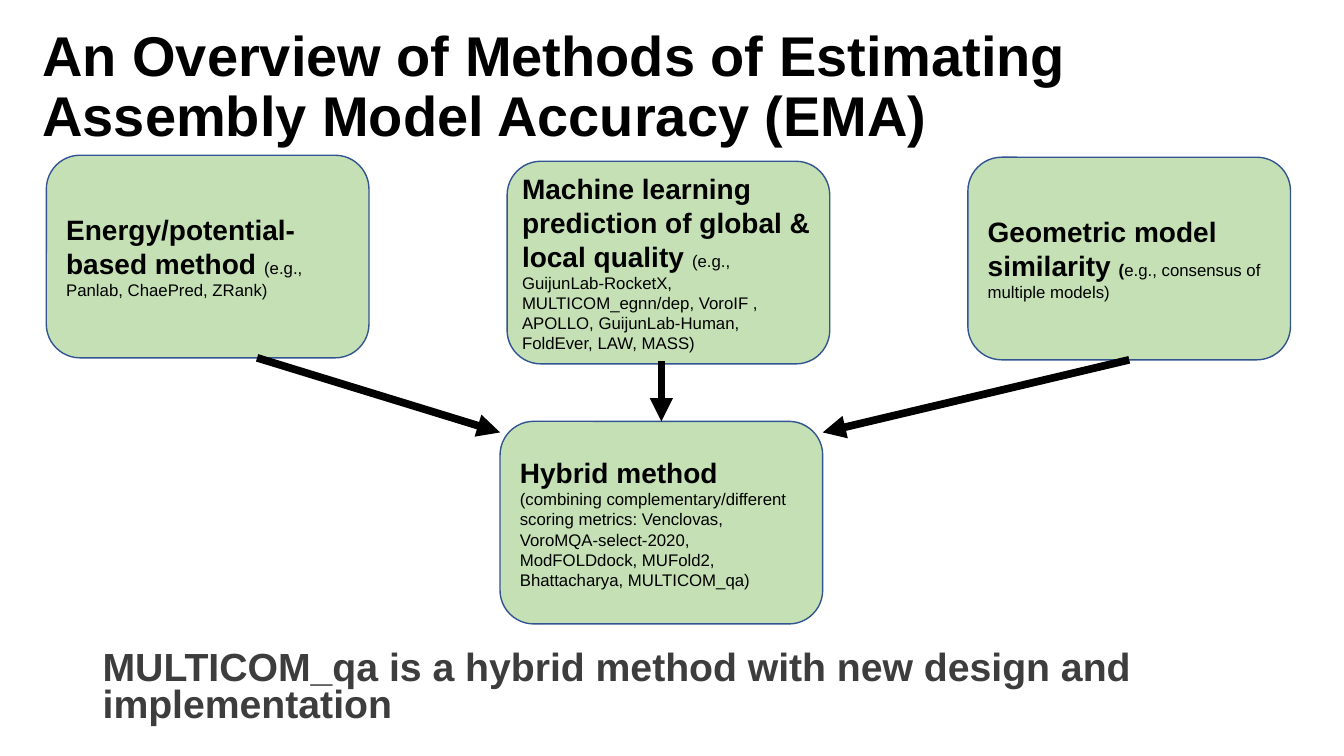
from dataclasses import dataclass

import pptx
import pptx.dml.color
import pptx.enum.shapes
import pptx.enum.text
import pptx.oxml.ns
import pptx.util
from lxml import etree

Inches = pptx.util.Inches
Pt = pptx.util.Pt
ANCHOR = pptx.enum.text.MSO_ANCHOR


@dataclass(frozen=True)
class Theme:
    font: str = "Arial"
    ink: str = "000000"
    muted: str = "3D3D3D"
    box_fill: str = "C5E0B4"
    box_line: str = "325491"
    title: int = 40
    takeaway: int = 28
    heading: int = 20
    detail: int = 12
    box_pt: float = 1
    arrow_pt: float = 5.5


THEME = Theme()

# Grid: three columns of equal boxes
SLIDE_W, SLIDE_H = 13.33, 7.5
BOX_W, BOX_H = 3.2, 2.01
COL_LEFT, COL_PITCH = 0.46, 4.57
HYBRID_LEFT, HYBRID_TOP = 4.96, 4.18
ARROW_DROP = 0.11  # side arrows meet the hybrid box just below its corners

# Column tops, inner margins and text runs (text, size, bold)
METHODS = [
    (1.54, 0.1, [
        ("Energy/potential-based method ", THEME.heading, True),
        ("(e.g., Panlab, ChaePred, ZRank)", THEME.detail, False)]),
    (1.6, 0.05, [
        ("Machine learning prediction of global & local quality ", THEME.heading, True),
        ("(e.g., GuijunLab-RocketX, MULTICOM_egnn/dep, VoroIF , APOLLO, "
         "GuijunLab-Human, FoldEver, LAW, MASS)", THEME.detail, False)]),
    (1.56, 0.1, [
        ("Geometric model similarity ", THEME.heading, True),
        ("(", THEME.detail, True),
        ("e.g., consensus of multiple models)", THEME.detail, False)]),
]
HYBRID_RUNS = [
    ("Hybrid method ", THEME.heading, True),
    ("(combining complementary/different scoring metrics: Venclovas, "
     "VoroMQA-select-2020, ModFOLDdock, MUFold2, Bhattacharya, MULTICOM_qa)",
     THEME.detail, False),
]


def rgb(value):
    return pptx.dml.color.RGBColor.from_string(value)


def write_runs(tf, runs, color=THEME.ink, spacing=1.0):
    tf.word_wrap = True
    tf.auto_size = pptx.enum.text.MSO_AUTO_SIZE.NONE
    p = tf.paragraphs[0]
    p.alignment = pptx.enum.text.PP_ALIGN.LEFT
    p.line_spacing = spacing
    for text, size, bold in runs:
        r = p.add_run()
        r.text = text
        r.font.name = THEME.font
        r.font.size = Pt(size)
        r.font.bold = bold
        r.font.color.rgb = rgb(color)


def add_title(s, text):
    sp = s.shapes.title
    sp.left, sp.top = Inches(0.32), Inches(0.15)
    sp.width, sp.height = Inches(SLIDE_W - 0.32), Inches(1.45)
    sp.text_frame.vertical_anchor = ANCHOR.MIDDLE
    write_runs(sp.text_frame, [(text, THEME.title, True)], spacing=0.9)


def add_takeaway(s, text):
    sp = s.shapes.add_textbox(Inches(0.92), Inches(6.41), Inches(11.5), Inches(0.86))
    write_runs(sp.text_frame, [(text, THEME.takeaway, True)], THEME.muted, 0.8)


def add_method(s, left, top, runs, margin=0.1):
    sp = s.shapes.add_shape(
        pptx.enum.shapes.MSO_SHAPE.ROUNDED_RECTANGLE,
        Inches(left), Inches(top), Inches(BOX_W), Inches(BOX_H))
    sp.shadow.inherit = False
    sp.fill.solid()
    sp.fill.fore_color.rgb = rgb(THEME.box_fill)
    sp.line.color.rgb = rgb(THEME.box_line)
    sp.line.width = Pt(THEME.box_pt)
    tf = sp.text_frame
    tf.vertical_anchor = ANCHOR.MIDDLE
    tf.margin_left = tf.margin_right = Inches(margin)
    tf.margin_top = tf.margin_bottom = Inches(0.05)
    write_runs(tf, runs)
    return sp


def add_arrow(s, start, end):
    points = [Inches(v) for v in (*start, *end)]
    line = s.shapes.add_connector(pptx.enum.shapes.MSO_CONNECTOR.STRAIGHT, *points)
    line.line.color.rgb = rgb(THEME.ink)
    line.line.width = Pt(THEME.arrow_pt)
    qn = pptx.oxml.ns.qn
    etree.SubElement(line.line._get_or_add_ln(), qn("a:tailEnd"), type="triangle")
    etree.SubElement(line._element.spPr, qn("a:effectLst"))
    return line


def main():
    prs = pptx.Presentation()
    prs.slide_width, prs.slide_height = Inches(SLIDE_W), Inches(SLIDE_H)
    s = prs.slides.add_slide(prs.slide_layouts.get_by_name("Title Only"))

    # Title and closing statement
    add_title(s, "An Overview of Methods of Estimating Assembly Model Accuracy (EMA)")
    add_takeaway(s, "MULTICOM_qa is a hybrid method with new design and implementation")

    # Three method families above the hybrid method
    boxes = [add_method(s, COL_LEFT + col * COL_PITCH, top, runs, margin)
             for col, (top, margin, runs) in enumerate(METHODS)]
    hybrid = add_method(s, HYBRID_LEFT, HYBRID_TOP, HYBRID_RUNS)

    # Arrows into the hybrid method
    center = HYBRID_LEFT + BOX_W / 2
    side_y = HYBRID_TOP + ARROW_DROP
    add_arrow(s, (2.55, 3.55), (HYBRID_LEFT, side_y))
    middle = add_arrow(s, (center, 3.58), (center, HYBRID_TOP))
    middle.end_connect(hybrid, 0)
    right = add_arrow(s, (11.2, 3.57), (HYBRID_LEFT + BOX_W, side_y))
    right.begin_connect(boxes[2], 2)

    prs.save("out.pptx")


if __name__ == "__main__":
    main()
